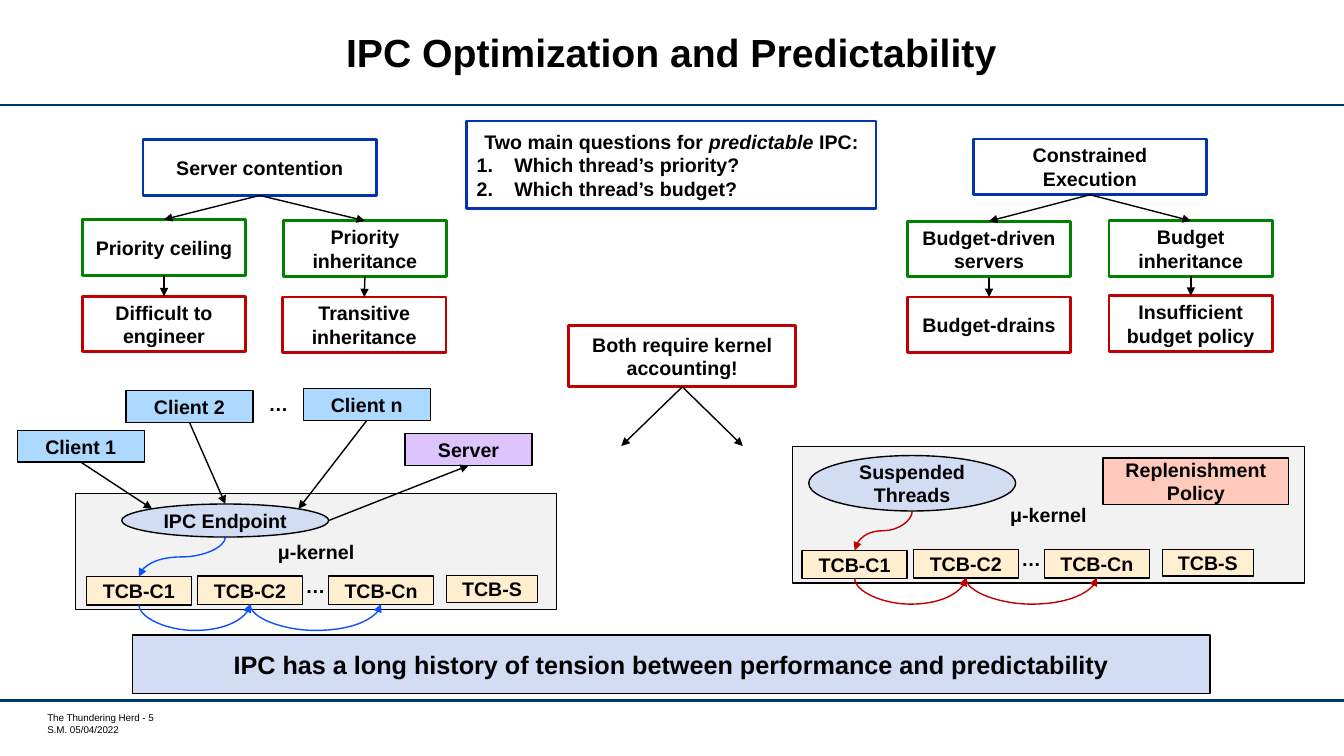
from pptx import Presentation, util as u
from pptx.dml.color import RGBColor
from pptx.enum import shapes as s, text as t
from pptx.oxml.ns import qn
from lxml import etree

Pt = u.Pt
BLACK = RGBColor(0x00, 0x00, 0x00)
WHITE = RGBColor(0xFF, 0xFF, 0xFF)
NAVY = RGBColor(0x00, 0x37, 0x67)
BLUE = RGBColor(0x02, 0x34, 0xAD)
GREEN = RGBColor(0x00, 0x82, 0x00)
RED = RGBColor(0xC0, 0x00, 0x00)
SKY = RGBColor(0xAE, 0xD9, 0xFF)
LILAC = RGBColor(0xDE, 0xC4, 0xFD)
PALE = RGBColor(0xD2, 0xDC, 0xF2)
GREY = RGBColor(0xF2, 0xF2, 0xF2)
CREAM = RGBColor(0xFF, 0xEE, 0xD0)
PINK = RGBColor(0xFF, 0xC9, 0xBB)
VIVID = RGBColor(0x0B, 0x52, 0xFC)
RECT, OVAL = s.MSO_SHAPE.RECTANGLE, s.MSO_SHAPE.OVAL
LINE, CURVE = s.MSO_CONNECTOR.STRAIGHT, s.MSO_CONNECTOR.CURVE

deck = Presentation()
deck.slide_width, deck.slide_height = Pt(960), Pt(540)
slide = deck.slides.add_slide(deck.slide_layouts[5])
parts = slide.shapes


def box(words, x, y, w, h, fill, edge=BLACK, thick=1, kind=RECT):
    item = parts.add_shape(kind, Pt(x), Pt(y), Pt(w), Pt(h))
    item.shadow.inherit = False
    item.fill.solid()
    item.fill.fore_color.rgb = fill
    item.line.color.rgb = edge
    item.line.width = Pt(thick)
    par = item.text_frame.paragraphs[0]
    par.alignment = t.PP_ALIGN.CENTER
    par.add_run().text = words
    return item


def ink(link, tone, thick=1, tip=True):
    link.line.color.rgb = tone
    link.line.width = Pt(thick)
    if tip:
        tail = etree.SubElement(link.line._get_or_add_ln(), qn("a:tailEnd"))
        tail.set("type", "triangle")
    etree.SubElement(link._element.spPr, qn("a:effectLst"))


# Title and rules
title = parts.title
title.left, title.top, title.width, title.height = Pt(98.6), Pt(7.9), Pt(761.8), Pt(64.1)
title.text_frame.vertical_anchor = t.MSO_ANCHOR.MIDDLE
par = title.text_frame.paragraphs[0]
par.alignment = t.PP_ALIGN.CENTER
par.line_spacing = Pt(28)
run = par.add_run()
run.text = "IPC Optimization and Predictability"
run.font.size = Pt(28)
for y in (75, 500.4):
    ink(parts.add_connector(LINE, 0, Pt(y), Pt(960), Pt(y)), NAVY, 1.75, False)

# Footer
foot = parts.add_textbox(Pt(33.8), Pt(508.3), Pt(146), Pt(17.3)).text_frame
foot.word_wrap = True
foot.margin_left = foot.margin_top = foot.margin_right = foot.margin_bottom = 0
for i, words in enumerate(("The Thundering Herd - 5", "S.M. 05/04/2022")):
    par = foot.add_paragraph() if i else foot.paragraphs[0]
    run = par.add_run()
    run.text = words
    run.font.size, run.font.bold = Pt(7), False

# Main message
note = box("IPC has a long history of tension between performance and predictability",
           94.6, 453.6, 769.7, 41.8, PALE)
note.text_frame.paragraphs[0].runs[0].font.size = Pt(18)

# Main questions
asks = box("Two main questions for ", 333.4, 86.4, 292.3, 62.6, WHITE, BLUE, 2).text_frame
run = asks.paragraphs[0].add_run()
run.text, run.font.italic = "predictable", True
asks.paragraphs[0].add_run().text = " IPC:"
for words in ("Which thread’s priority?", "Which thread’s budget?"):
    par = asks.add_paragraph()
    par.alignment = t.PP_ALIGN.LEFT
    props = par._p.get_or_add_pPr()
    props.set("marL", str(Pt(27)))
    props.set("indent", str(Pt(-27)))
    etree.SubElement(props, qn("a:buAutoNum")).set("type", "arabicPeriod")
    par.add_run().text = words

# Topic trees: topic, then each approach with its drawback
links = []
trees = [
    ("Server contention", 102.2, 99.8,
     [("Priority ceiling", 58.8, 156.8, "Difficult to engineer", 58.8, 211.6),
      ("Priority inheritance", 202.3, 157.7, "Transitive inheritance", 201.8, 212.2)]),
    ("Constrained Execution", 695.2, 99.3,
     [("Budget-driven servers", 648.1, 158, "Budget-drains", 648.1, 212.2),
      ("Budget inheritance", 792.2, 157.7, "Insufficient budget policy", 792.2, 211.2)]),
]
for topic, x, y, kids in trees:
    root = box(topic, x, y, 166.7, 39.8, WHITE, BLUE, 2)
    for way, wx, wy, flaw, fx, fy in kids:
        mid = box(way, wx, wy, 116.8, 39.8, WHITE, GREEN, 2)
        low = box(flaw, fx, fy, 116.8, 39.8, WHITE, RED, 2)
        links += [(root, mid), (mid, low)]

both = box("Both require kernel accounting!", 406.3, 232.4, 162.2, 43.9, WHITE, RED, 2)
links += [(both, (443.8, 318.6)), (both, (530.6, 318.6))]

# Kernels
box("μ-kernel", 54, 352.6, 343.6, 82.9, GREY)
box("IPC Endpoint ", 87, 360, 147.8, 23.6, PALE, kind=OVAL)
box("μ-kernel", 566, 319, 365.8, 97.4, GREY)
box("Suspended Threads", 577.7, 325.4, 147.8, 39.6, PALE, kind=OVAL)
box("Replenishment Policy", 788, 327, 132.5, 33.6, PINK)

# Clients and server
for words, x, y, end in (("Client 1", 12.4, 307.4, (108.7, 363.5)),
                         ("Client 2", 90, 279, (161, 360)),
                         ("Client n", 216.7, 277.6, (213.2, 363.5))):
    links.append((box(words, x, y, 90.7, 22.7, SKY), end))
server = box("Server", 289.4, 309.8, 90.7, 22.7, LILAC)
reply = parts.add_connector(LINE, Pt(234.8), Pt(371.8), Pt(334.8), Pt(332.5))
reply.end_connect(server, 2)
ink(reply, BLACK)

# Straight arrows
for start, end in links:
    spot = (Pt(end[0]), Pt(end[1])) if isinstance(end, tuple) else (0, 0)
    link = parts.add_connector(LINE, 0, 0, *spot)
    link.begin_connect(start, 2)
    if not isinstance(end, tuple):
        link.end_connect(end, 0)
    ink(link, BLACK)

# Thread queues with curved arrows; sx, sy is where the first arrow starts
dots = [(184.5, 276.5)]
for x, y, sx, sy, tone in ((61.7, 411.5, 161, 383.6, VIVID),
                           (573, 392.7, 651.6, 365, RED)):
    for words, dx, dy, w, h in (("TCB-C1", 0, 0.5, 75, 20.2), ("TCB-C2", 79.4, 0, 75, 20.2),
                                ("TCB-Cn", 173, 0, 75, 20.2), ("TCB-S", 257.3, -0.3, 65, 19.2)):
        box(words, x + dx, y + dy, w, h, CREAM)
    dots.append((x + 149.2, y - 5.4))
    base = y + 20.5
    for x1, y1, x2, y2, sag in ((sx, sy, x + 37.5, y + 0.5, 0),
                                (x + 37.5, base, x + 117, base - 0.5, 18),
                                (x + 117, base, x + 210.5, base - 0.5, 18)):
        # Laid out sideways, then turned a quarter
        w, h = abs(y2 - y1), abs(x2 - x1)
        cx, cy = (x1 + x2) / 2, (y1 + y2) / 2
        link = parts.add_connector(CURVE, Pt(cx - w / 2), Pt(cy - h / 2),
                                   Pt(cx + w / 2), Pt(cy + h / 2))
        frame = link._element.spPr.find(qn("a:xfrm"))
        frame.set("rot", "5400000")
        if sag:
            frame.set("flipH", "1")
            frame.set("flipV", "1")
            guide = etree.SubElement(link._element.spPr.find(".//" + qn("a:avLst")), qn("a:gd"))
            guide.set("name", "adj1")
            guide.set("fmla", f"val {round(-sag / w * 100000)}")
        ink(link, tone)

# Ellipsis marks
for x, y in dots:
    mark = parts.add_textbox(Pt(x), Pt(y), Pt(28.8), Pt(24.5)).text_frame
    mark.word_wrap = False
    mark.auto_size = t.MSO_AUTO_SIZE.SHAPE_TO_FIT_TEXT
    mark.paragraphs[0].alignment = t.PP_ALIGN.CENTER
    mark.paragraphs[0].add_run().text = "…"

# Shared type
for item in parts:
    if item.has_text_frame:
        for par in item.text_frame.paragraphs:
            for run in par.runs:
                font = run.font
                font.name, font.color.rgb = "Arial", BLACK
                font.size = font.size or Pt(14)
                font.bold = font.bold is not False

deck.save("out.pptx")
